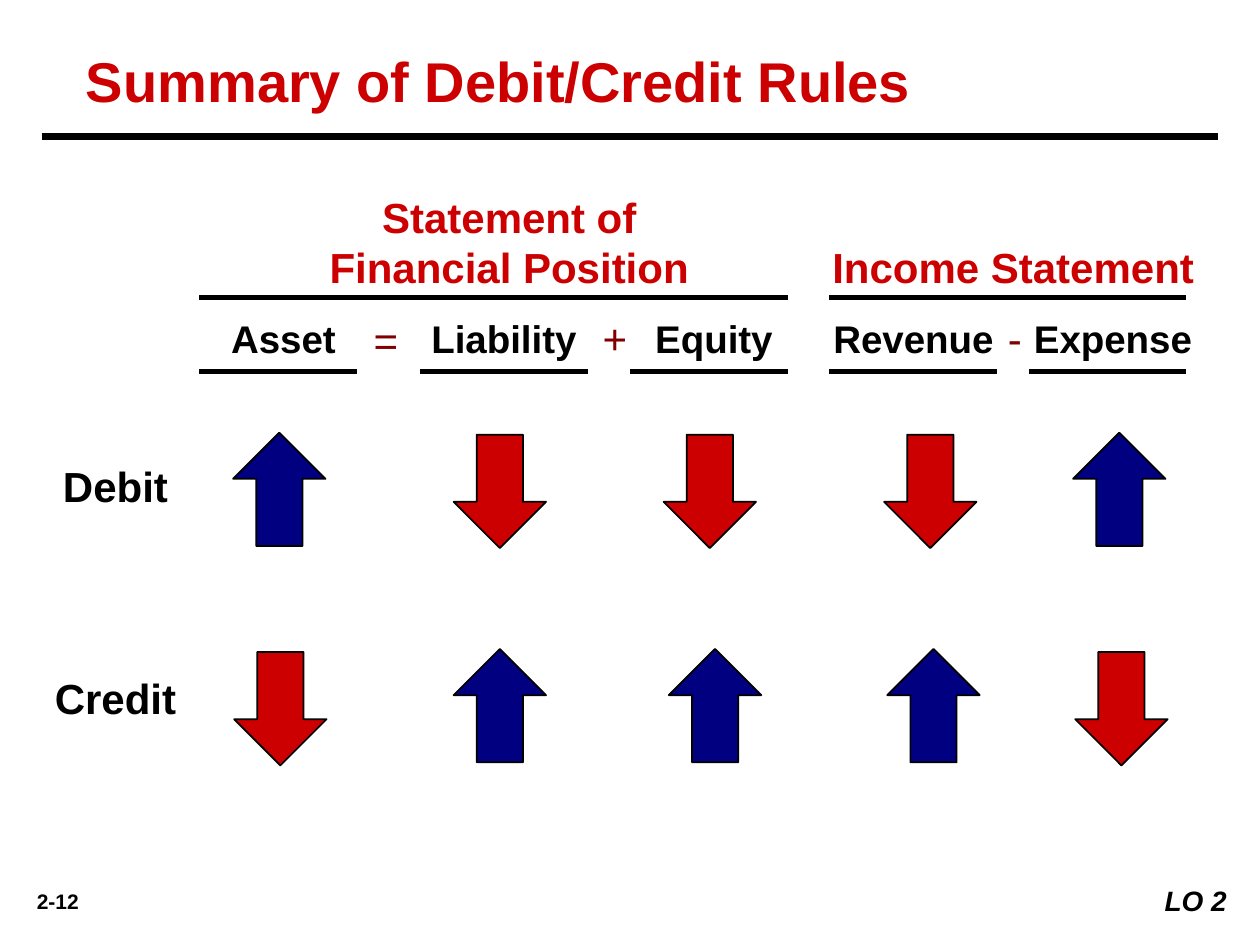
from pptx import Presentation
from pptx.dml.color import RGBColor
from pptx.enum.shapes import MSO_CONNECTOR, MSO_SHAPE
from pptx.enum.text import MSO_ANCHOR, PP_ALIGN
from pptx.util import Inches, Pt
from lxml import etree

STRAIGHT = MSO_CONNECTOR.STRAIGHT
DOWN_ARROW = MSO_SHAPE.DOWN_ARROW
LEFT, CENTER, RIGHT = PP_ALIGN.LEFT, PP_ALIGN.CENTER, PP_ALIGN.RIGHT
TOP, MIDDLE = MSO_ANCHOR.TOP, MSO_ANCHOR.MIDDLE
BLACK, RED, MAROON, NAVY, WHITE = "000000", "CC0000", "800000", "000080", "FFFFFF"
DRAWING = "http://schemas.openxmlformats.org/drawingml/2006/main"

presentation = Presentation()
presentation.slide_width = Inches(10)
presentation.slide_height = Inches(7.5)
slide = presentation.slides.add_slide(presentation.slide_layouts[6])
CELL = presentation.slide_width / 120


def paint(color_format, color):
    color_format.rgb = RGBColor.from_string(color)


def add_text(text, column, row, width, height, size=24, color=BLACK, bold=True,
             italic=False, align=CENTER, anchor=TOP):
    box = slide.shapes.add_textbox(*(round(n * CELL) for n in (column, row, width, height)))
    frame = box.text_frame
    frame.word_wrap = True
    frame.vertical_anchor = anchor
    paragraph = frame.paragraphs[0]
    paragraph.alignment = align
    run = paragraph.add_run()
    run.text = text
    run.font.name = "Arial"
    run.font.size = Pt(size)
    run.font.bold = bold
    run.font.italic = italic
    paint(run.font.color, color)
    return box


add_text("Summary of Debit/Credit Rules", 7, 4, 100, 7.3, size=32, color=RED,
         align=LEFT, anchor=MIDDLE)
add_text("Statement of Financial Position", 28, 17.6, 41, 10.9, color=RED)
add_text("Income Statement", 77, 22.4, 39, 6, color=RED)

for name, column in (("Asset", 18), ("Liability", 39), ("Equity", 59),
                     ("Revenue", 78), ("Expense", 97)):
    add_text(name, column, 29.4, 18, 5.6, size=22)

for sign, column, row in (("=", 34.4, 29.4), ("+", 56.2, 29.2), ("-", 94.8, 29.2)):
    add_text(sign, column, row, 5.6, 6, color=MAROON, bold=False, align=LEFT)

for name, row in (("Debit", 43.3), ("Credit", 63.5)):
    add_text(name, 2, row, 18, 6)

rules = [(4, 116, 13, 4.5), (19, 75, 28.3, 3), (79, 113, 28.3, 3)]
rules += [(start, end, 35.4, 3) for start, end in
          ((19, 34), (40, 56), (60, 75), (79, 95), (98, 113))]
for start, end, row, weight in rules:
    y = round(row * CELL)
    line = slide.shapes.add_connector(STRAIGHT, round(start * CELL), y, round(end * CELL), y)
    line.line.width = Pt(weight)
    paint(line.line.color, BLACK)
    etree.SubElement(line._element.spPr, f"{{{DRAWING}}}effectLst")

arrow_rows = (
    (41.2, 41.4, ((22.2, "up"), (43.2, "down"), (63.2, "down"), (84.2, "down"), (102.2, "up"))),
    (61.8, 62.1, ((22.3, "down"), (43.2, "up"), (63.7, "up"), (84.5, "up"), (102.4, "down"))),
)
for up_row, down_row, arrows in arrow_rows:
    for column, direction in arrows:
        is_up = direction == "up"
        row = up_row if is_up else down_row
        arrow = slide.shapes.add_shape(
            DOWN_ARROW, *(round(n * CELL) for n in (column, row, 8.8, 10.8)))
        arrow.shadow.inherit = False
        arrow.rotation = 180 if is_up else 0
        arrow.fill.solid()
        paint(arrow.fill.fore_color, NAVY if is_up else RED)
        arrow.line.width = Pt(1)
        paint(arrow.line.color, BLACK)

add_text("2-12", 1, 84, 9, 3.6, size=12)
objective = add_text("LO 2", 106, 83.6, 12, 4.4, size=16, italic=True, align=RIGHT)
objective.fill.solid()
paint(objective.fill.fore_color, WHITE)

presentation.save("out.pptx")
